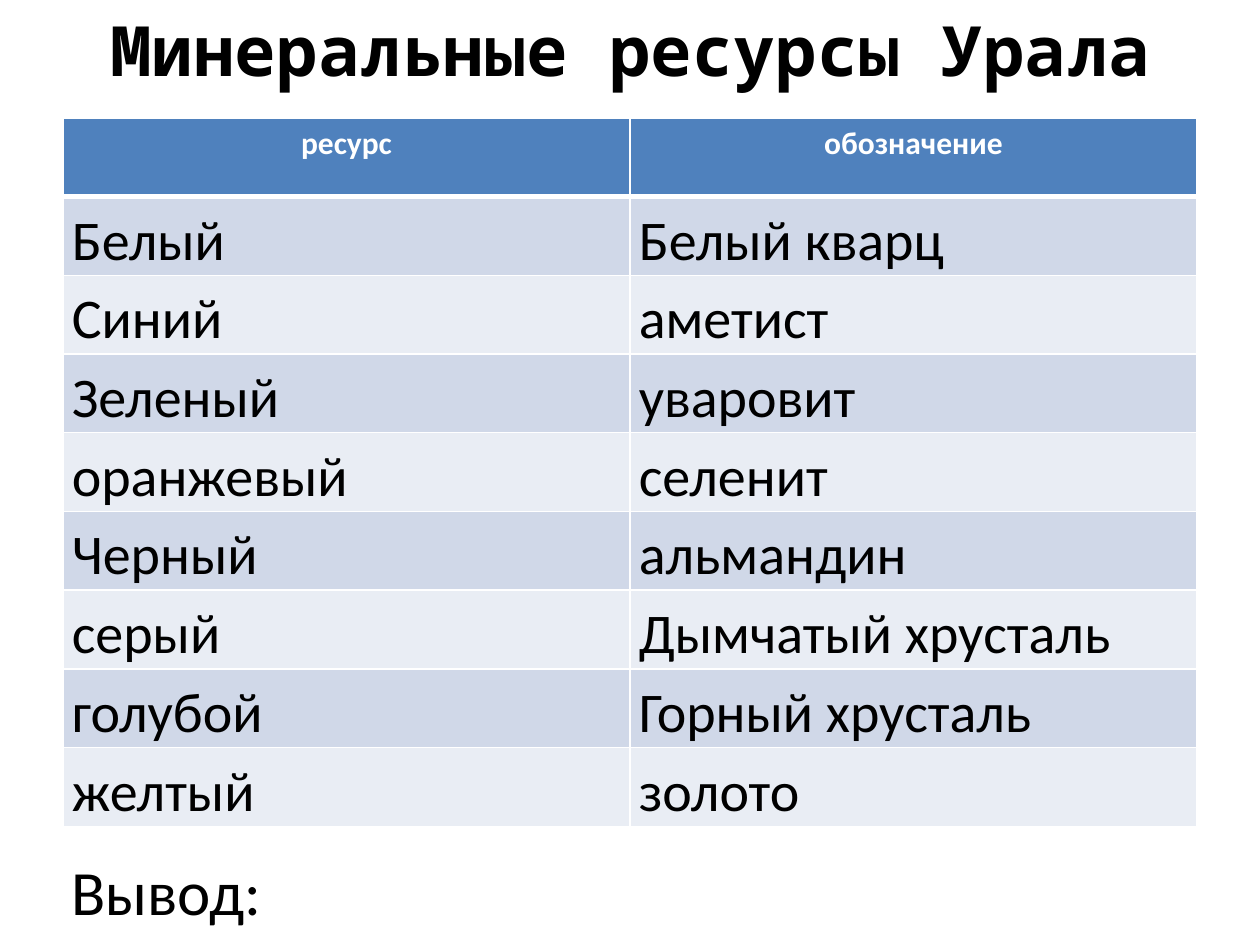
from lxml import etree
from pptx import Presentation
from pptx.dml.color import RGBColor
from pptx.enum import text
from pptx.oxml import ns
from pptx.util import Inches, Pt

COLORS = {"head": "4F81BD", "odd": "D0D8E8", "even": "E9EDF4",
          "white": "FFFFFF", "black": "000000"}
ROWS = [
    ("ресурс", "обозначение"),
    ("Белый", "Белый кварц"),
    ("Синий", "аметист"),
    ("Зеленый", "уваровит"),
    ("оранжевый", "селенит"),
    ("Черный", "альмандин"),
    ("серый", "Дымчатый хрусталь"),
    ("голубой", "Горный хрусталь"),
    ("желтый", "золото"),
]
FONTS = {
    "title": {"name": "Noto Sans Mono", "size": Pt(39.6), "bold": True},
    "head": {"name": "Calibri", "size": Pt(18), "bold": True},
    "body": {"name": "Calibri", "size": Pt(32), "bold": False},
    "note": {"name": "Calibri", "size": Pt(36)},
}
INSETS = {"margin_left": Inches(0.07), "margin_right": Inches(0.07),
          "margin_top": 0, "margin_bottom": 0}


def style(para, kind, color):
    for key, val in FONTS[kind].items():
        setattr(para.font, key, val)
    para.font.color.rgb = RGBColor.from_string(COLORS[color])


def edge(cell, side, width):
    line = etree.SubElement(cell._tc.get_or_add_tcPr(), ns.qn(f"a:ln{side}"),
                            w=str(Pt(width)))
    fill = etree.SubElement(line, ns.qn("a:solidFill"))
    etree.SubElement(fill, ns.qn("a:srgbClr"), val=COLORS["white"])


prs = Presentation()
prs.slide_width, prs.slide_height = Inches(10), Inches(7.5)
slide = prs.slides.add_slide(prs.slide_layouts[5])

# Title
title = slide.shapes.title
title.left, title.top = Inches(0.5), Inches(0)
title.width, title.height = Inches(9), Inches(0.78)
frame = title.text_frame
frame.text = "Минеральные ресурсы Урала"
frame.auto_size = text.MSO_AUTO_SIZE.NONE
frame.vertical_anchor = text.MSO_ANCHOR.MIDDLE
frame.paragraphs[0].alignment = text.PP_ALIGN.CENTER
style(frame.paragraphs[0], "title", "black")

# Table of resources
table = slide.shapes.add_table(len(ROWS), 2, Inches(0.5), Inches(0.94),
                               Inches(9), Inches(5.1)).table
for r, row in enumerate(ROWS):
    head = r == 0
    table.rows[r].height = Inches(0.62 if head else 0.56)
    shade = "head" if head else ("odd" if r % 2 else "even")
    for c, word in enumerate(row):
        cell = table.cell(r, c)
        cell.text = word
        para = cell.text_frame.paragraphs[0]
        if head:
            para.alignment = text.PP_ALIGN.CENTER
            style(para, "head", "white")
        else:
            para.line_spacing = 1.15
            style(para, "body", "black")
            for key, val in INSETS.items():
                setattr(cell, key, val)
        for side in "LRTB":
            thick = (head and side == "B") or (r == 1 and side == "T")
            edge(cell, side, 3 if thick else 1)
        cell.fill.solid()
        cell.fill.fore_color.rgb = RGBColor.from_string(COLORS[shade])

# Conclusion
note = slide.shapes.add_textbox(Inches(0.47), Inches(6.72),
                                Inches(3.83), Inches(0.71)).text_frame
note.word_wrap = True
note.auto_size = text.MSO_AUTO_SIZE.SHAPE_TO_FIT_TEXT
note.text = "Вывод:"
style(note.paragraphs[0], "note", "black")

prs.save("out.pptx")
